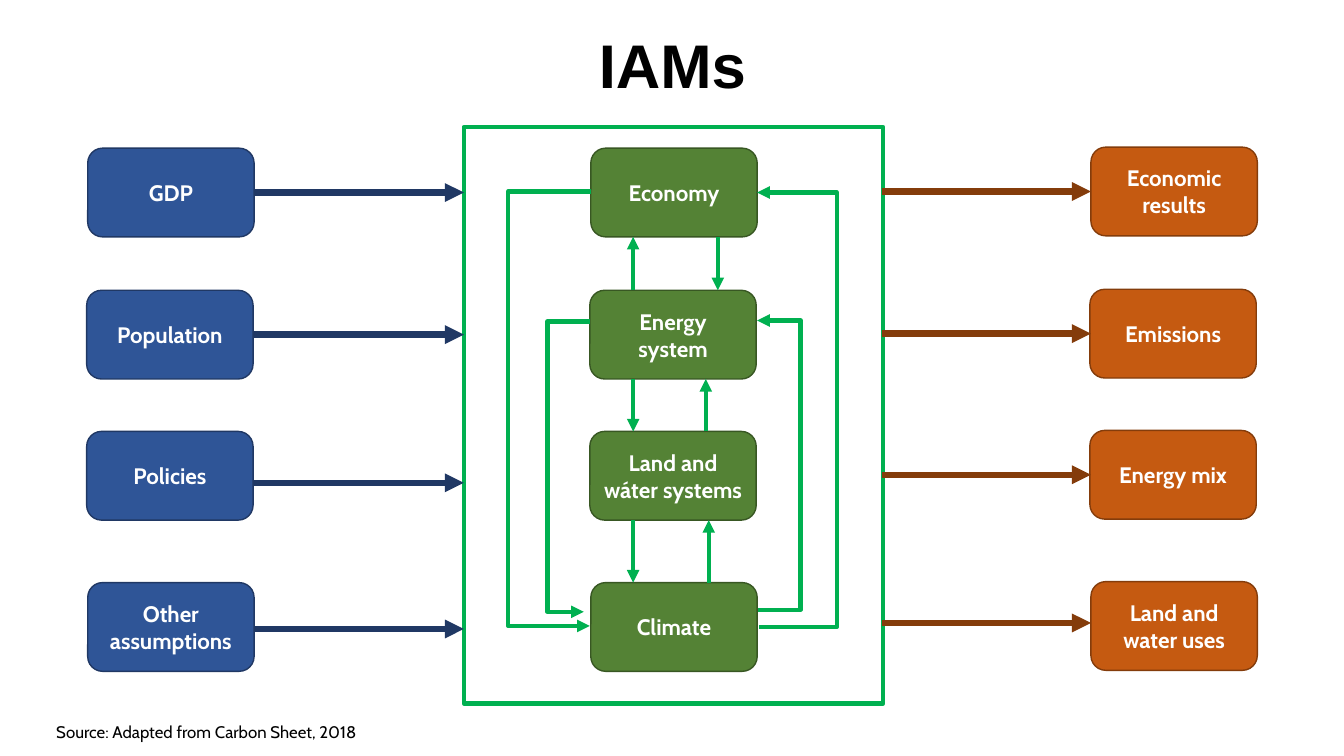
from pptx import Presentation
from pptx.dml.color import RGBColor
from pptx.enum import shapes, text
from pptx.oxml import ns
from pptx.util import Inches, Pt
from lxml import etree

COLORS = {
    "input": "2F5597", "input_edge": "203864",
    "model": "548235", "model_edge": "385723",
    "output": "C55A11", "output_edge": "843C0B",
    "flow": "00B050", "white": "FFFFFF", "black": "000000",
}
BOX_W, BOX_H = 1.65, 0.88
ROW_TOPS = (0, 1.41, 2.81, 4.31)
ROW_SHIFTS = (0.01, 0, 0, 0.01)


def color(name):
    return RGBColor.from_string(COLORS[name])


def add_text(frame, words, size, font, ink, bold=False, align=text.PP_ALIGN.CENTER):
    para = frame.paragraphs[0]
    para.alignment = align
    span = para.add_run()
    span.text = words
    span.font.name = font
    span.font.size = Pt(size)
    span.font.bold = bold
    span.font.color.rgb = color(ink)


def style_line(shape, ink, width, arrow=False):
    shape.line.color.rgb = color(ink)
    shape.line.width = Pt(width)
    if arrow:
        line = shape.line._get_or_add_ln()
        etree.SubElement(line, ns.qn("a:tailEnd"), type="triangle")


def add_arrow(page, start, end, ink, width):
    arrow = page.shapes.add_connector(
        shapes.MSO_CONNECTOR.STRAIGHT, *(Inches(v) for v in (*start, *end)))
    style_line(arrow, ink, width, arrow=True)
    etree.SubElement(arrow._element.spPr, ns.qn("a:effectLst"))


def add_loop(page, start_x, bend_x, end_x, start_y, end_y):
    """Draw a three-sided arrow that runs round the model boxes."""
    points = [(start_x, start_y), (bend_x, start_y), (bend_x, end_y), (end_x, end_y)]
    corners = [(Inches(x), Inches(y)) for x, y in points]
    builder = page.shapes.build_freeform(*corners[0])
    builder.add_line_segments(corners[1:], close=False)
    loop = builder.convert_to_shape()
    loop.fill.background()
    loop.shadow.inherit = False
    style_line(loop, "flow", 3, arrow=True)


def add_column(page, left, top, labels, kind):
    """Stack one rounded box per label."""
    for label, drop, shift in zip(labels, ROW_TOPS, ROW_SHIFTS):
        box = page.shapes.add_shape(
            shapes.MSO_SHAPE.ROUNDED_RECTANGLE, Inches(left + shift),
            Inches(top + drop), Inches(BOX_W), Inches(BOX_H))
        box.shadow.inherit = False
        box.fill.solid()
        box.fill.fore_color.rgb = color(kind)
        style_line(box, kind + "_edge", 1)
        box.text_frame.word_wrap = True
        box.text_frame.vertical_anchor = text.MSO_ANCHOR.MIDDLE
        add_text(box.text_frame, label, 16, "Cabin", "white", bold=True)


def add_side_arrows(page, left, right, heights, ink):
    for y in heights:
        add_arrow(page, (left, y), (right, y), ink, 4.5)


def add_model(page, left, top, width, height):
    """Draw the framed model with its boxes and feedback arrows."""
    box_left, box_top = left + 1.25, top + 0.21
    add_column(page, box_left, box_top,
               ("Economy", "Energy system", "Land and wáter systems", "Climate"), "model")
    frame = page.shapes.add_shape(shapes.MSO_SHAPE.RECTANGLE, *(
        Inches(v) for v in (left, top, width, height)))
    frame.fill.background()
    frame.shadow.inherit = False
    style_line(frame, "flow", 3)

    box_right = box_left + BOX_W
    add_loop(page, box_right + 0.03, left + 3.7, box_right + 0.01, top + 4.96, top + 0.65)
    add_loop(page, box_left + 0.01, left + 0.44, box_left, top + 0.64, top + 4.95)
    add_loop(page, box_right + 0.02, left + 3.34, box_right + 0.01, top + 4.79, top + 1.92)
    add_loop(page, box_left, left + 0.83, box_left - 0.06, top + 1.93, top + 4.81)

    gaps = [(box_top + upper + BOX_H, box_top + lower)
            for upper, lower in zip(ROW_TOPS, ROW_TOPS[1:])]
    for (above, below), down_x, up_x in zip(gaps, (7.12, 6.28, 6.28), (6.28, 7, 7.03)):
        add_arrow(page, (down_x, above), (down_x, below), "flow", 3)
        add_arrow(page, (up_x, below), (up_x, above), "flow", 3)


def add_caption(page, left, top, width, height, words, wrap, **style):
    box = page.shapes.add_textbox(*(Inches(v) for v in (left, top, width, height)))
    box.text_frame.word_wrap = wrap
    add_text(box.text_frame, words, **style)


def main():
    deck = Presentation()
    deck.slide_width, deck.slide_height = Inches(13.33), Inches(7.5)
    page = deck.slides.add_slide(deck.slide_layouts[6])
    add_column(page, 0.86, 1.47,
               ("GDP", "Population", "Policies", "Other assumptions"), "input")
    add_model(page, 4.6, 1.26, 4.16, 5.72)
    add_column(page, 10.81, 1.46,
               ("Economic results", "Emissions", "Energy mix", "Land and water uses"),
               "output")
    add_side_arrows(page, 2.52, 4.6, (1.91, 3.32, 4.79, 6.24), "input_edge")
    add_side_arrows(page, 8.75, 10.82, (1.9, 3.31, 4.71, 6.18), "output_edge")
    add_caption(page, 1.32, 0.22, 10.7, 0.64, "IAMs", True,
                size=44, font="Arial", ink="black", bold=True)
    add_caption(page, 0.46, 7.11, 3.36, 0.3, "Source: Adapted from Carbon Sheet, 2018",
                False, size=12, font="Cabin", ink="black", align=text.PP_ALIGN.LEFT)
    deck.save("out.pptx")


if __name__ == "__main__":
    main()
